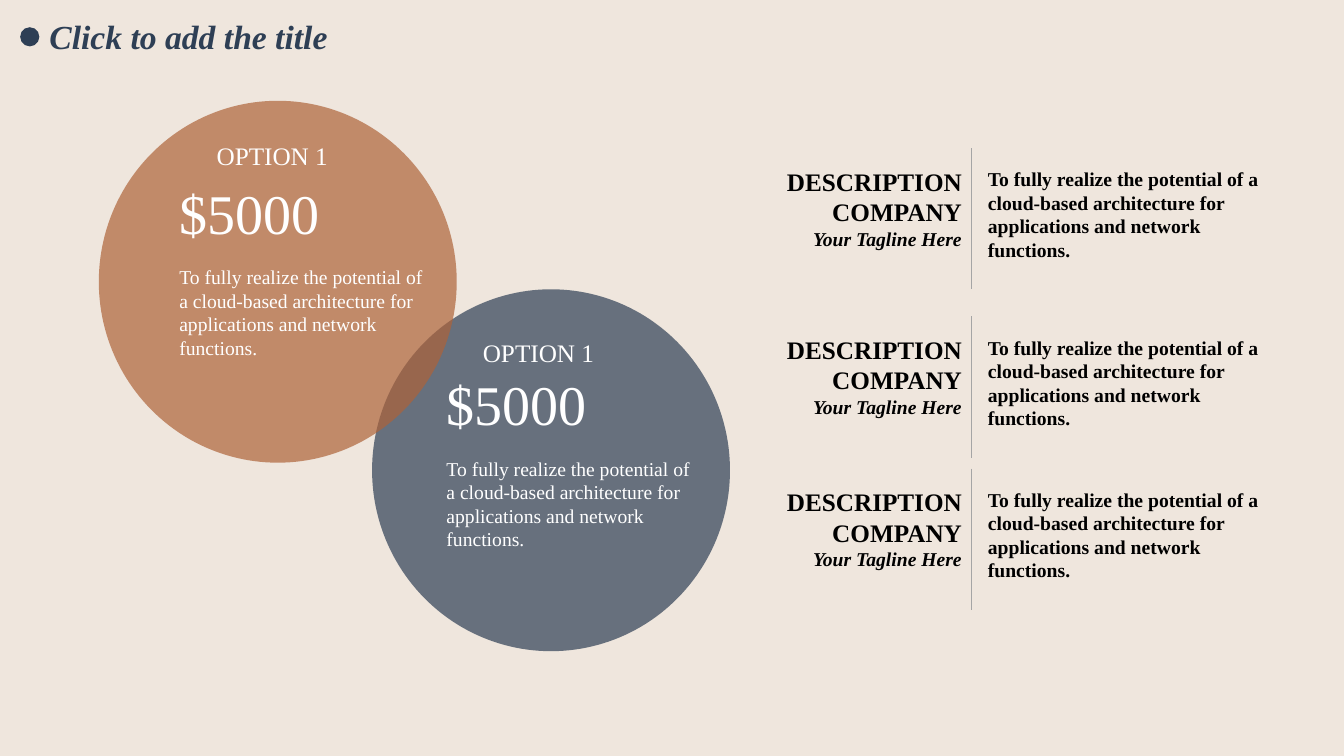
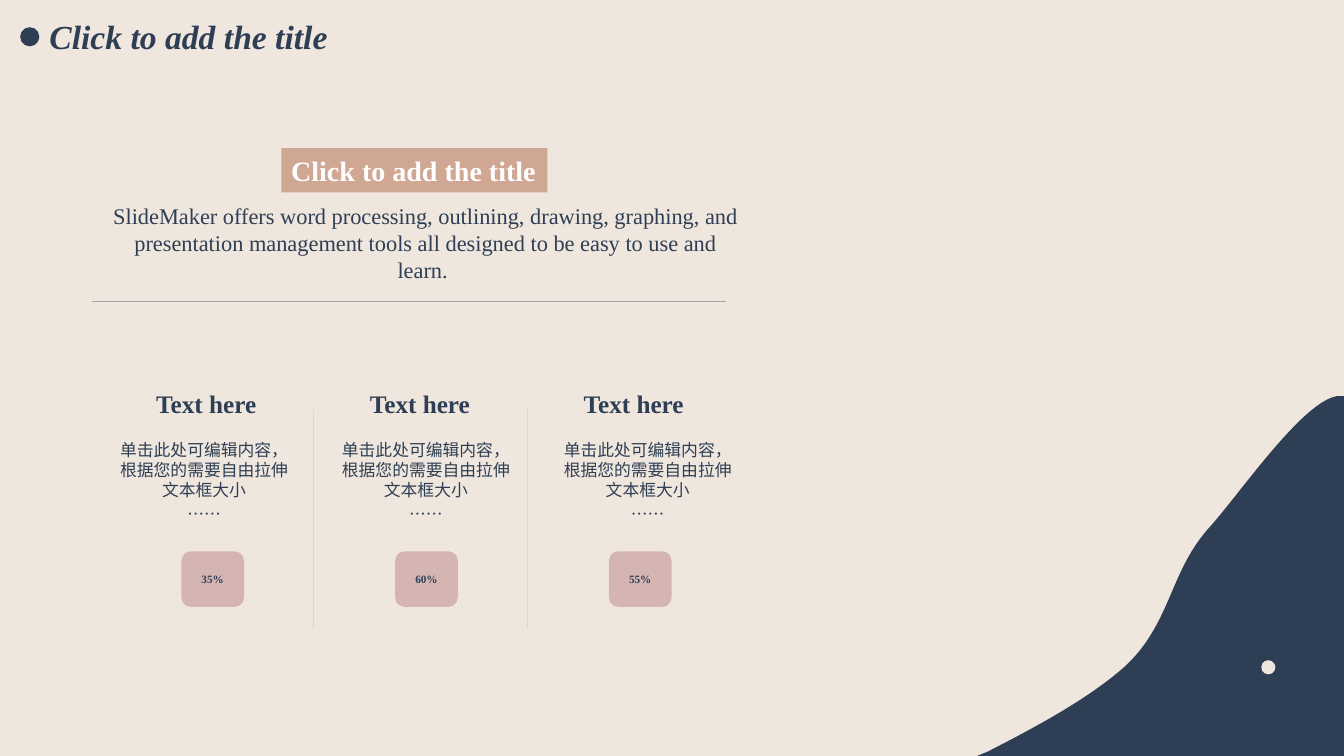
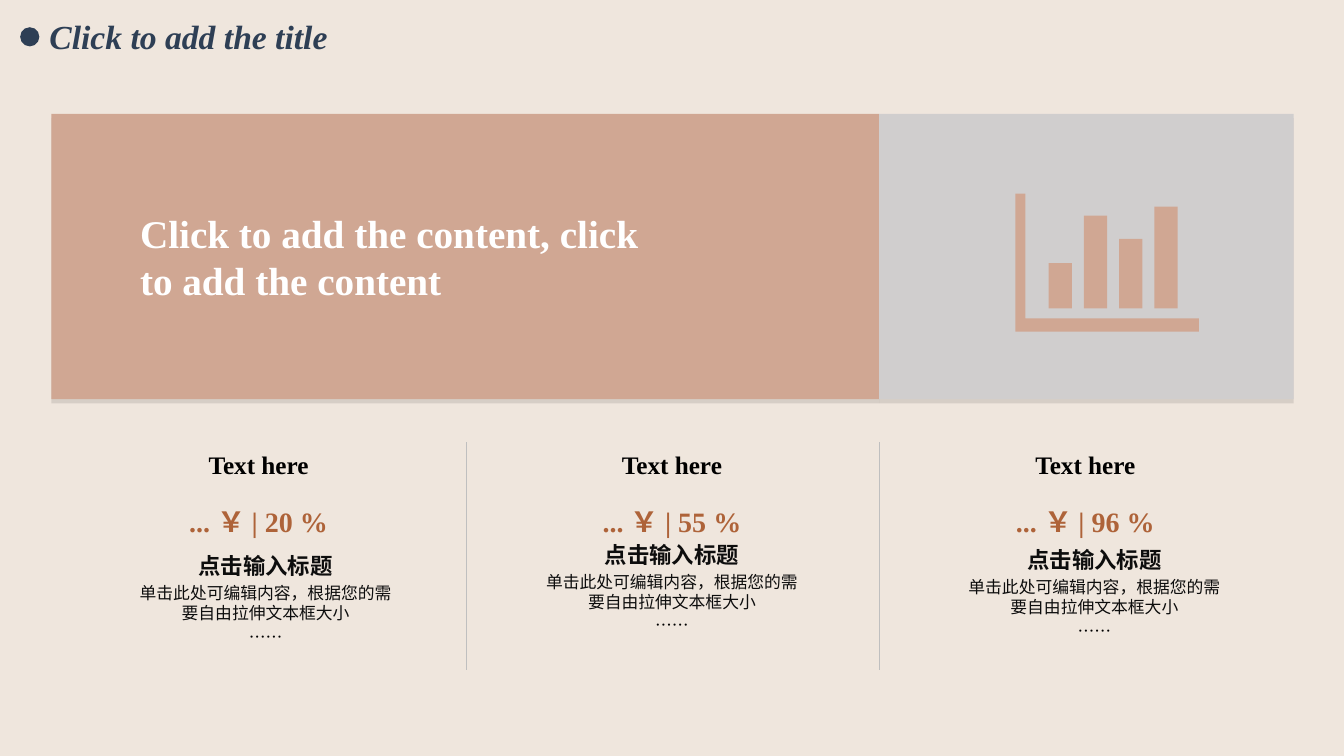
from dataclasses import dataclass, replace

from lxml.etree import SubElement
from pptx import Presentation
from pptx.dml.color import RGBColor
from pptx.enum.shapes import MSO_CONNECTOR as Connector, MSO_SHAPE as Preset
from pptx.enum.text import MSO_ANCHOR as Anchor, PP_ALIGN as Align
from pptx.oxml.ns import qn
from pptx.util import Inches, Pt

CREAM = RGBColor(0xEF, 0xE6, 0xDD)
NAVY = RGBColor(0x2E, 0x3F, 0x55)
RUST = RGBColor(0xAE, 0x63, 0x39)
TAN = RGBColor(0xD0, 0xA7, 0x93)
ROSE = RGBColor(0xD4, 0xB5, 0xB2)
SILVER = RGBColor(0xD0, 0xCE, 0xCE)
WHITE = RGBColor(0xFF, 0xFF, 0xFF)
BLACK = RGBColor(0, 0, 0)
INK = RGBColor(0x0D, 0x0D, 0x0D)
GRAY = RGBColor(0xA5, 0xA5, 0xA5)
RULE_GRAY = RGBColor(0xBF, 0xBF, 0xBF)
PALE_GRAY = RGBColor(0xD9, 0xD9, 0xD9)

SERIF = "Times New Roman"
CHINESE = "Noto Sans CJK SC"

TITLE = "Click to add the title"
CLOUD = ("To fully realize the potential of a cloud-based architecture "
         "for applications and network functions.")
INTRO = ("SlideMaker offers word processing, outlining, drawing, graphing, and "
         "presentation management tools all designed to be easy to use and learn. ")
EDIT_HINT = "单击此处可编辑内容，根据您的需要自由拉伸文本框大小"
DOTS = "……"


@dataclass(frozen=True)
class Style:
    size: float
    color: RGBColor
    bold: bool = False
    italic: bool = False
    font: str = SERIF


def bezier(start, first, second, end, steps=24):
    points = []
    for step in range(1, steps + 1):
        t = step / steps
        weights = ((1 - t) ** 3, 3 * t * (1 - t) ** 2, 3 * t * t * (1 - t), t ** 3)
        points.append(tuple(
            sum(weight * value for weight, value in zip(weights, axis))
            for axis in zip(start, first, second, end)))
    return points


def rectangle(left, top, right, bottom):
    return [(left, top), (right, top), (right, bottom), (left, bottom)]


class Deck:
    def __init__(self):
        self.presentation = Presentation()
        self.presentation.slide_width = Inches(13.33)
        self.presentation.slide_height = Inches(7.5)
        background = self.presentation.slide_master.background.fill
        background.solid()
        background.fore_color.rgb = CREAM
        self.slide = None

    def new_slide(self):
        self.slide = self.presentation.slides.add_slide(self.presentation.slide_layouts[5])
        title = self.slide.shapes.title
        title.left, title.top, title.width, title.height = map(Inches, (0.39, 0.11, 3.15, 0.5))
        self.set_text(title, [(TITLE, Style(24, NAVY, bold=True, italic=True))])
        self.shape(Preset.OVAL, (0.2, 0.27, 0.19, 0.19), NAVY)

    def set_text(self, shape, lines, align=Align.LEFT, anchor=Anchor.TOP, wrap=True,
                 inset=True, gap=0):
        frame = shape.text_frame
        frame.word_wrap = wrap
        frame.vertical_anchor = anchor
        frame.margin_left = frame.margin_right = Inches(0.1 if inset else 0)
        frame.margin_top = frame.margin_bottom = Inches(0.05 if inset else 0)
        for index, (text, style) in enumerate(lines):
            paragraph = frame.add_paragraph() if index else frame.paragraphs[0]
            paragraph.alignment = align
            paragraph.line_spacing = 1.0
            paragraph.space_before = Pt(gap if index else 0)
            run = paragraph.add_run()
            run.text = text
            font = run.font
            font.name, font.size = style.font, Pt(style.size)
            font.bold, font.italic = style.bold, style.italic
            font.color.rgb = style.color
            SubElement(run._r.get_or_add_rPr(), qn("a:ea"), typeface=CHINESE)

    def text(self, box, lines, **layout):
        shape = self.slide.shapes.add_textbox(*map(Inches, box))
        self.set_text(shape, lines, **layout)

    def paint(self, shape, color):
        shape.shadow.inherit = False
        shape.fill.solid()
        shape.fill.fore_color.rgb = color
        shape.line.fill.background()

    def shape(self, preset, box, color, opacity=100):
        shape = self.slide.shapes.add_shape(preset, *map(Inches, box))
        self.paint(shape, color)
        if opacity < 100:
            fill_color = shape.fill._xPr.find(".//" + qn("a:srgbClr"))
            SubElement(fill_color, qn("a:alpha"), val=str(opacity * 1000))
        return shape

    def drop_shadow(self, shape):
        effects = shape._element.spPr.find(qn("a:effectLst"))
        shadow = SubElement(effects, qn("a:outerShdw"), blurRad="0", dist=str(Pt(3)),
                            dir="5400000", algn="t", rotWithShape="0")
        color = SubElement(shadow, qn("a:srgbClr"), val=str(BLACK))
        SubElement(color, qn("a:alpha"), val="10000")

    def line(self, start, end, color, width=0.25):
        connector = self.slide.shapes.add_connector(
            Connector.STRAIGHT, *map(Inches, start + end))
        connector.line.color.rgb = color
        connector.line.width = Pt(width)
        SubElement(connector._element.spPr, qn("a:effectLst"))

    def outline(self, contours, color):
        contours = [[(Inches(x), Inches(y)) for x, y in contour] for contour in contours]
        builder = self.slide.shapes.build_freeform(*contours[0][0])
        for index, contour in enumerate(contours):
            if index:
                builder.move_to(*contour[0])
            builder.add_line_segments(contour[1:], close=True)
        self.paint(builder.convert_to_shape(), color)


def build_options(deck):
    deck.new_slide()
    for left, top, color in ((3.69, 2.87, NAVY), (0.98, 1, RUST)):
        deck.shape(Preset.OVAL, (left, top, 3.55, 3.59), color, opacity=70)
    for left, top, label_left, label_top in ((1.68, 1.72, 2.05, 1.34), (4.33, 3.62, 4.69, 3.3)):
        deck.text((label_left, label_top, 1.32, 0.4), [("OPTION 1", Style(18, WHITE))], wrap=False)
        deck.text((left, top, 1.6, 0.77), [("$5000", Style(40, WHITE))], wrap=False)
        deck.text((left, top + 0.86, 2.64, 1.04), [(CLOUD, Style(14, WHITE))])

    heading = Style(18, BLACK, bold=True)
    detail = replace(heading, size=14)
    tagline = replace(detail, italic=True)
    for top in (1.47, 3.14, 4.65):
        deck.text((7.68, top + 0.13, 1.96, 0.94),
                  [("DESCRIPTION", heading), ("COMPANY", heading), ("Your Tagline Here", tagline)],
                  align=Align.RIGHT, wrap=False)
        deck.line((9.63, top), (9.63, top + 1.4), GRAY, 0.5)
        deck.text((9.7, top + 0.14, 2.93, 1.04), [(CLOUD, detail)])


def build_percentages(deck):
    deck.new_slide()
    banner = deck.shape(Preset.RECTANGLE, (2.79, 1.47, 2.64, 0.44), TAN)
    deck.set_text(banner, [(TITLE, Style(20, WHITE, bold=True))], wrap=False)
    deck.text((1.12, 2.01, 6.2, 0.81), [(INTRO, Style(16, NAVY))],
              align=Align.CENTER, inset=False)
    deck.line((0.91, 2.99), (7.2, 2.99), GRAY)

    centered = {"align": Align.CENTER, "anchor": Anchor.MIDDLE}
    hint = Style(12, NAVY, font=CHINESE)
    for column, share in enumerate(("35%", "60%", "55%")):
        shift = 2.12 * column
        deck.text((1.14 + shift, 3.72, 1.81, 0.56),
                  [("Text here", Style(18, NAVY, bold=True))], **centered)
        deck.text((1.06 + 2.2 * column, 4.31, 1.93, 1.09),
                  [(EDIT_HINT, hint), (DOTS, hint)], align=Align.CENTER, gap=2.4)
        chip = deck.shape(Preset.ROUNDED_RECTANGLE, (1.8 + shift, 5.47, 0.62, 0.55), ROSE)
        deck.set_text(chip, [(share, Style(8, NAVY, bold=True))], **centered)
        if column:
            deck.line((0.99 + shift, 4.06), (0.99 + shift, 6.24), PALE_GRAY)

    wave = [(13.33, 7.5), (9.69, 7.5), (9.79, 7.46)]
    for curve in (((10.32, 7.19), (10.81, 6.92), (11.16, 6.61)),
                  ((11.61, 6.19), (11.6, 5.68), (11.98, 5.25)),
                  ((12.29, 4.91), (12.91, 3.99), (13.26, 3.93))):
        wave += bezier(wave[-1], *curve)
    deck.outline([wave + [(13.33, 3.93)]], NAVY)
    deck.shape(Preset.OVAL, (12.51, 6.55, 0.14, 0.14), CREAM)


def build_figures(deck):
    deck.new_slide()
    for left, width, color in ((0.51, 8.21, TAN), (8.72, 4.11, SILVER)):
        deck.drop_shadow(deck.shape(Preset.RECTANGLE, (left, 1.13, width, 2.83), color))
    deck.text((1.29, 1.75, 5.38, 1.58),
              [("Click to add the content, click to add the content", Style(28, WHITE, bold=True))],
              anchor=Anchor.MIDDLE)

    axes = [(10.07, 1.92), (10.17, 1.92), (10.17, 3.16), (11.89, 3.16), (11.89, 3.29), (10.07, 3.29)]
    bars = [rectangle(10.4 + 0.35 * index, top, 10.63 + 0.35 * index, 3.06)
            for index, top in enumerate((2.61, 2.14, 2.37, 2.05))]
    deck.outline([axes] + bars, TAN)

    centered = {"align": Align.CENTER, "anchor": Anchor.MIDDLE}
    subtitle = Style(16, INK, bold=True, font=CHINESE)
    hint = replace(subtitle, size=12, bold=False)
    columns = ((20, 1.36, 5.48), (55, 5.39, 5.37), (96, 9.58, 5.42))
    for column, (share, note_left, note_top) in enumerate(columns):
        left = 1 + 4.1 * column
        deck.text((left, 4.31, 3.13, 0.6),
                  [("Text here", Style(18, BLACK, bold=True))], **centered)
        deck.text((left, 4.95, 3.13, 0.45),
                  [(f"... ￥ | {share} %", Style(20, RUST, bold=True))], **centered)
        deck.text((note_left, note_top, 2.55, 1.13),
                  [("点击输入标题", subtitle), (EDIT_HINT, hint), (DOTS, replace(hint, color=BLACK))],
                  align=Align.CENTER, inset=False, gap=2.4)
        if column:
            deck.line((left - 0.48, 4.39), (left - 0.48, 6.65), RULE_GRAY)


def main():
    deck = Deck()
    build_options(deck)
    build_percentages(deck)
    build_figures(deck)
    deck.presentation.save("out.pptx")


if __name__ == "__main__":
    main()
